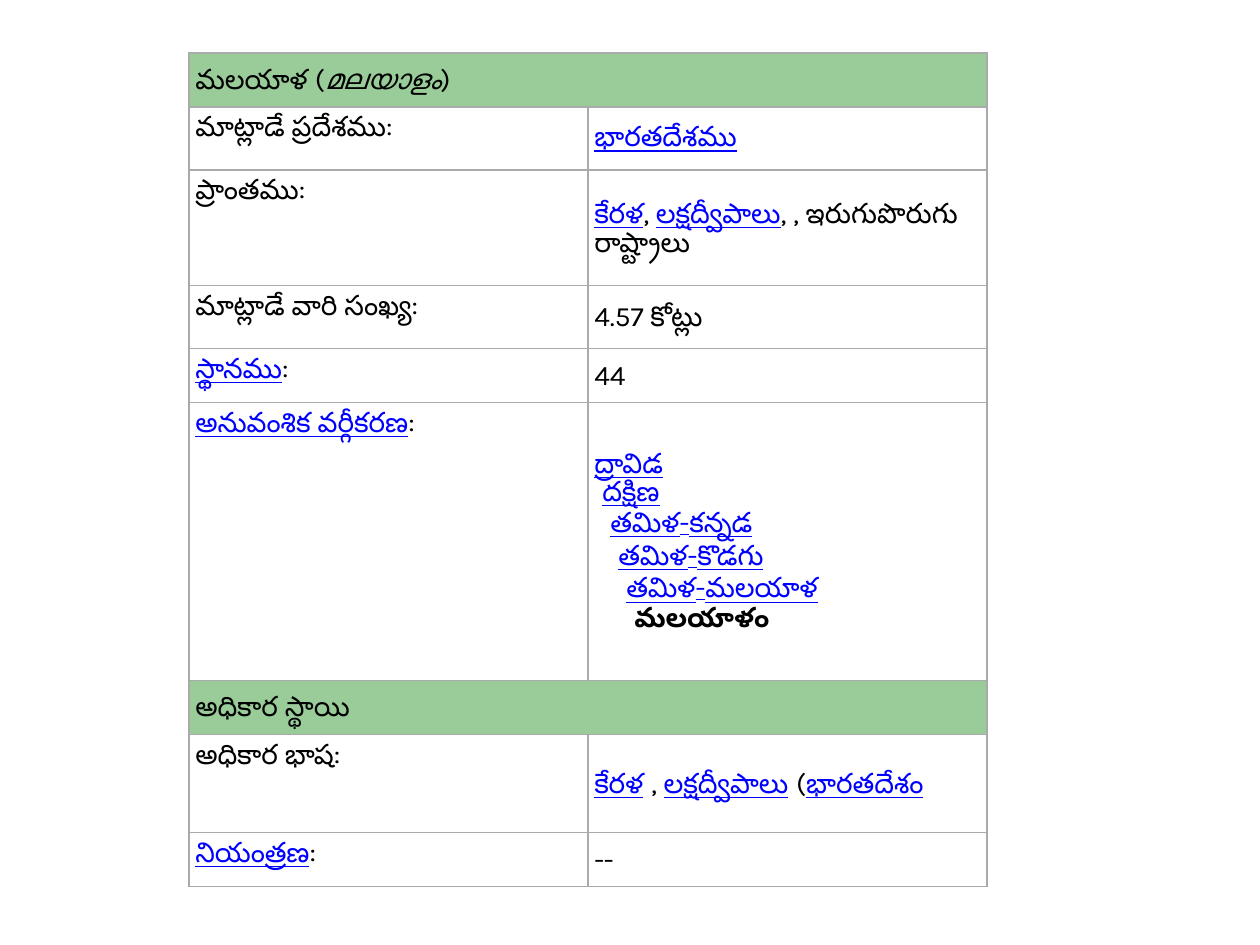
from dataclasses import dataclass

from lxml.etree import SubElement
from pptx import Presentation
from pptx.dml.color import RGBColor
from pptx.enum.text import MSO_ANCHOR
from pptx.oxml.ns import qn
from pptx.table import Table, _Cell as Cell
from pptx.util import Emu, Inches, Pt

BLACK = RGBColor(0x00, 0x00, 0x00)
BLUE = RGBColor(0x00, 0x00, 0xFF)
GREEN = RGBColor(0x99, 0xCC, 0x99)
WHITE = RGBColor(0xFF, 0xFF, 0xFF)
GREY = RGBColor(0xAA, 0xAA, 0xAA)
FONT = "Karla"
SIZE = Pt(16)
LEFT, TOP = 189, 53
COL_WIDTH = 399
INDENT = 8


def px(n: int) -> Emu:
    return Emu(round(n * 914400 / 126))


@dataclass(frozen=True)
class Run:
    text: str
    link: bool = False
    bold: bool = False
    italic: bool = False


@dataclass(frozen=True)
class Line:
    runs: tuple[Run, ...]
    level: int = 0


@dataclass(frozen=True)
class Row:
    height: int
    label: Line
    values: tuple[Line, ...] = ()


def link(text: str) -> Run:
    return Run(text, link=True)


def line(*runs: Run, level: int = 0) -> Line:
    return Line(runs, level)


FAMILY = ("ద్రావిడ", "దక్షిణ", "తమిళ-కన్నడ", "తమిళ-కొడగు", "తమిళ-మలయాళ")
TREE = tuple(line(link(name), level=i) for i, name in enumerate(FAMILY))
TREE += (line(Run("మలయాళం", bold=True), level=len(FAMILY)),)

ROWS = (
    Row(54, line(Run("మలయాళ ("), Run("മലയാളം", italic=True), Run(")"))),
    Row(63, line(Run("మాట్లాడే ప్రదేశము:")), (line(link("భారతదేశము")),)),
    Row(116, line(Run("ప్రాంతము:")),
        (line(link("కేరళ"), Run(",\u00a0"), link("లక్షద్వీపాలు"),
              Run(", , ఇరుగుపొరుగు రాష్ట్రాలు")),)),
    Row(63, line(Run("మాట్లాడే వారి సంఖ్య:")), (line(Run("4.57 కోట్లు")),)),
    Row(54, line(link("స్థానము"), Run(":")), (line(Run("44")),)),
    Row(278, line(link("అనువంశిక వర్గీకరణ"), Run(":")), TREE),
    Row(54, line(Run("అధికార స్థాయి"))),
    Row(98, line(Run("అధికార భాష:")),
        (line(link("కేరళ"), Run("\u00a0,\u00a0"), link("లక్షద్వీపాలు"),
              Run("\u00a0("), link("భారతదేశం")),)),
    Row(54, line(link("నియంత్రణ"), Run(":")), (line(Run("--")),)),
)


def set_borders(cell: Cell) -> None:
    tcPr = cell._tc.get_or_add_tcPr()
    for side in ("lnL", "lnR", "lnT", "lnB"):
        ln = SubElement(tcPr, qn(f"a:{side}"), w=str(Pt(0.75)))
        fill = SubElement(ln, qn("a:solidFill"))
        SubElement(fill, qn("a:srgbClr"), val=str(GREY))


def style_cell(cell: Cell, color: RGBColor, anchor: MSO_ANCHOR) -> None:
    set_borders(cell)
    cell.fill.solid()
    cell.fill.fore_color.rgb = color
    cell.margin_left = cell.margin_right = Inches(0.05)
    cell.margin_top = cell.margin_bottom = Inches(0.03)
    cell.vertical_anchor = anchor


def write_lines(cell: Cell, lines: tuple[Line, ...]) -> None:
    tf = cell.text_frame
    for i, item in enumerate(lines):
        p = tf.add_paragraph() if i else tf.paragraphs[0]
        if item.level:
            p._p.get_or_add_pPr().set("marL", str(px(item.level * INDENT)))
        for run in item.runs:
            r = p.add_run()
            r.text = run.text
            r.font.name = FONT
            r.font.size = SIZE
            r.font.bold = run.bold
            r.font.italic = run.italic
            r.font.underline = run.link
            r.font.color.rgb = BLUE if run.link else BLACK


def draw_row(table: Table, index: int, row: Row) -> None:
    table.rows[index].height = px(row.height)
    first, second = table.cell(index, 0), table.cell(index, 1)
    if row.values:
        style_cell(first, WHITE, MSO_ANCHOR.TOP)
        style_cell(second, WHITE, MSO_ANCHOR.MIDDLE)
        write_lines(second, row.values)
    else:
        first.merge(second)
        for cell in (first, second):
            style_cell(cell, GREEN, MSO_ANCHOR.MIDDLE)
    write_lines(first, (row.label,))


def main() -> None:
    prs = Presentation()
    prs.slide_width, prs.slide_height = Inches(10), Inches(7.5)
    s = prs.slides.add_slide(prs.slide_layouts[6])
    height = sum(row.height for row in ROWS)
    table = s.shapes.add_table(len(ROWS), 2, px(LEFT), px(TOP),
                               px(2 * COL_WIDTH), px(height)).table
    table.first_row = table.horz_banding = False
    for column in table.columns:
        column.width = px(COL_WIDTH)
    for i, row in enumerate(ROWS):
        draw_row(table, i, row)
    prs.save("out.pptx")


if __name__ == "__main__":
    main()
